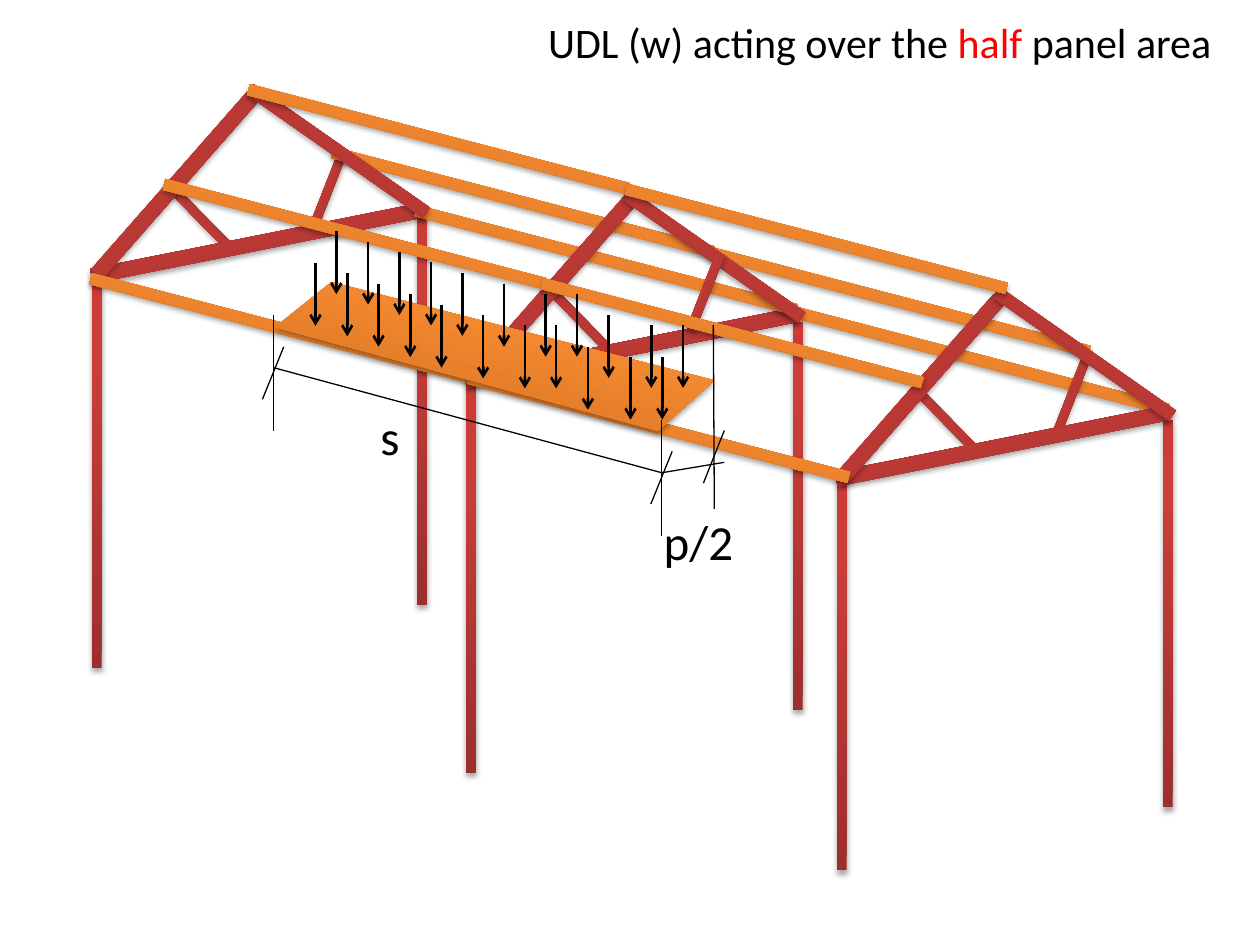
import math
from lxml import etree
from pptx import Presentation
from pptx import util as u
from pptx.dml.color import RGBColor
from pptx.enum import shapes, text
from pptx.oxml import parse_xml
from pptx.oxml.ns import nsdecls, qn

BLACK = RGBColor(0x00, 0x00, 0x00)
RED = RGBColor(0xFF, 0x00, 0x00)
STEEL = [RGBColor(0x9C, 0x2F, 0x2D), RGBColor(0xCB, 0x3E, 0x3A), RGBColor(0xCE, 0x3B, 0x37)]
ORANGE = [RGBColor(0xCC, 0x6E, 0x20), RGBColor(0xFF, 0x90, 0x34), RGBColor(0xFF, 0x91, 0x36)]


def style_solid(sp, colors):
    sp.line.fill.background()
    sp.fill.background()
    stops = "".join(f'<a:gs pos="{pos}"><a:srgbClr val="{c}"/></a:gs>'
                    for pos, c in zip((0, 80000, 100000), colors))
    grad = parse_xml(f'<a:gradFill {nsdecls("a")} rotWithShape="1"><a:gsLst>{stops}</a:gsLst>'
                     '<a:lin ang="16200000" scaled="0"/></a:gradFill>')
    sp_pr = sp._element.spPr
    sp_pr.replace(sp_pr.find(qn("a:noFill")), grad)
    sp_pr.append(parse_xml(
        f'<a:effectLst {nsdecls("a")}><a:outerShdw blurRad="40000" dist="23000" dir="5400000" '
        'rotWithShape="0"><a:srgbClr val="000000"><a:alpha val="35000"/></a:srgbClr>'
        '</a:outerShdw></a:effectLst>'))


def add_line(x1, y1, x2, y2, width, arrow=False):
    line = s.shapes.add_connector(shapes.MSO_CONNECTOR.STRAIGHT,
                                  u.Cm(x1), u.Cm(y1), u.Cm(x2), u.Cm(y2))
    line.line.color.rgb = BLACK
    line.line.width = u.Pt(width)
    if arrow:
        etree.SubElement(line.line._get_or_add_ln(), qn("a:tailEnd"), type="arrow")
    etree.SubElement(line._element.spPr, qn("a:effectLst"))


prs = Presentation()
prs.slide_width, prs.slide_height = u.Cm(25.4), u.Cm(19.05)
s = prs.slides.add_slide(prs.slide_layouts[6])

members = {
    "purlin": (7.92, 0.23, 14.6, ORANGE),
    "post": (0.2, 7.82, 0, STEEL),
    "tie": (6.83, 0.3, 348.7, STEEL),
    "left rafter": (4.78, 0.3, 311.3, STEEL),
    "right rafter": (4.34, 0.25, 35, STEEL),
    "left web": (1.63, 0.18, 45.6, STEEL),
    "right web": (1.63, 0.18, 111.4, STEEL),
}
frame = [
    ("purlin", [(15.75, 7.14)]),
    ("right web", [(20.8, 7.85)]),
    ("left web", [(18.24, 8.36), (10.82, 6.3), (3.2, 4.27)]),
    ("right web", [(5.79, 3.76)]),
    ("purlin", [(14.17, 5.97), (6.58, 3.96)]),
    ("post", [(16.87, 9.73), (23.44, 8.46)]),
    ("tie", [(16.79, 8.84)]),
    ("left rafter", [(16.18, 7.67)]),
    ("right rafter", [(19.69, 7.01)]),
    ("post", [(9.4, 7.77), (15.98, 6.5)]),
    ("tie", [(9.32, 6.86)]),
    ("post", [(1.85, 5.64), (8.41, 4.37)]),
    ("tie", [(1.78, 4.75)]),
    ("left rafter", [(1.14, 3.58)]),
    ("purlin", [(1.7, 6.5), (8.26, 5.13)]),
    ("left rafter", [(8.71, 5.72)]),
    ("right rafter", [(12.22, 5.03), (4.65, 2.92)]),
    ("purlin", [(9.32, 8.51), (4.88, 2.69), (12.5, 4.7), (3.18, 4.6)]),
    ("right web", [(13.41, 5.79)]),
    ("purlin", [(10.8, 6.6)]),
]
for kind, places in frame:
    w, h, angle, colors = members[kind]
    for x, y in places:
        sp = s.shapes.add_shape(shapes.MSO_SHAPE.RECTANGLE, u.Cm(x), u.Cm(y), u.Cm(w), u.Cm(h))
        sp.rotation = angle
        if kind.endswith("web"):
            sp._element.spPr.find(qn("a:xfrm")).set("flipV", "1")
        style_solid(sp, colors)

slope = 14.6
cos, sin = math.cos(math.radians(slope)), math.sin(math.radians(slope))
cx, cy = 9.96, 7.16
corners = [(6.68, 5.69), (14.4, 7.67), (13.26, 8.69), (5.54, 6.6)]
flat = [(u.Cm(cx + (x - cx) * cos + (y - cy) * sin), u.Cm(cy - (x - cx) * sin + (y - cy) * cos))
        for x, y in corners]
builder = s.shapes.build_freeform(*flat[0])
builder.add_line_segments(flat[1:], close=True)
panel = builder.convert_to_shape()
panel.rotation = slope
style_solid(panel, ORANGE)

load_points = [(13.77, 6.55), (13.13, 6.55), (12.27, 6.35), (11.63, 5.92), (11, 5.92), (10.16, 5.72),
               (9.32, 5.5), (8.69, 5.29), (8.05, 5.08), (7.42, 4.87), (6.78, 4.66)]
for x, y in load_points:
    for dx, dy in ((0, 0), (-0.42, 0.64)):
        add_line(x + dx, y + dy, x + dx, y + dy + 1.27, 1.5, arrow=True)

dimension_lines = [
    (5.51, 7.41, 13.34, 9.53), (5.51, 6.35, 5.51, 8.69), (13.34, 8.46, 13.34, 10.8),
    (5.72, 6.99, 5.29, 8.05), (13.55, 9.1, 13.12, 10.16), (14.38, 6.55, 14.4, 10.26),
    (13.34, 9.53, 14.6, 9.32), (14.6, 8.68, 14.18, 9.74),
]
for ends in dimension_lines:
    add_line(*ends, 0.75)

labels = [
    (10.8, 0.2, 14.02, 1.27, 24, [("UDL (w) acting over the ", BLACK), ("half", RED), (" panel area", BLACK)]),
    (7.42, 8.08, 0.91, 1.45, 28, [("s", BLACK)]),
    (13.13, 10.19, 1.93, 1.45, 28, [("p/2", BLACK)]),
]
for x, y, w, h, size, runs in labels:
    tf = s.shapes.add_textbox(u.Cm(x), u.Cm(y), u.Cm(w), u.Cm(h)).text_frame
    tf.word_wrap = False
    tf.auto_size = text.MSO_AUTO_SIZE.SHAPE_TO_FIT_TEXT
    p = tf.paragraphs[0]
    for words, color in runs:
        r = p.add_run()
        r.text = words
        r.font.name, r.font.size = "Calibri", u.Pt(size)
        r.font.color.rgb = color

prs.save("out.pptx")
